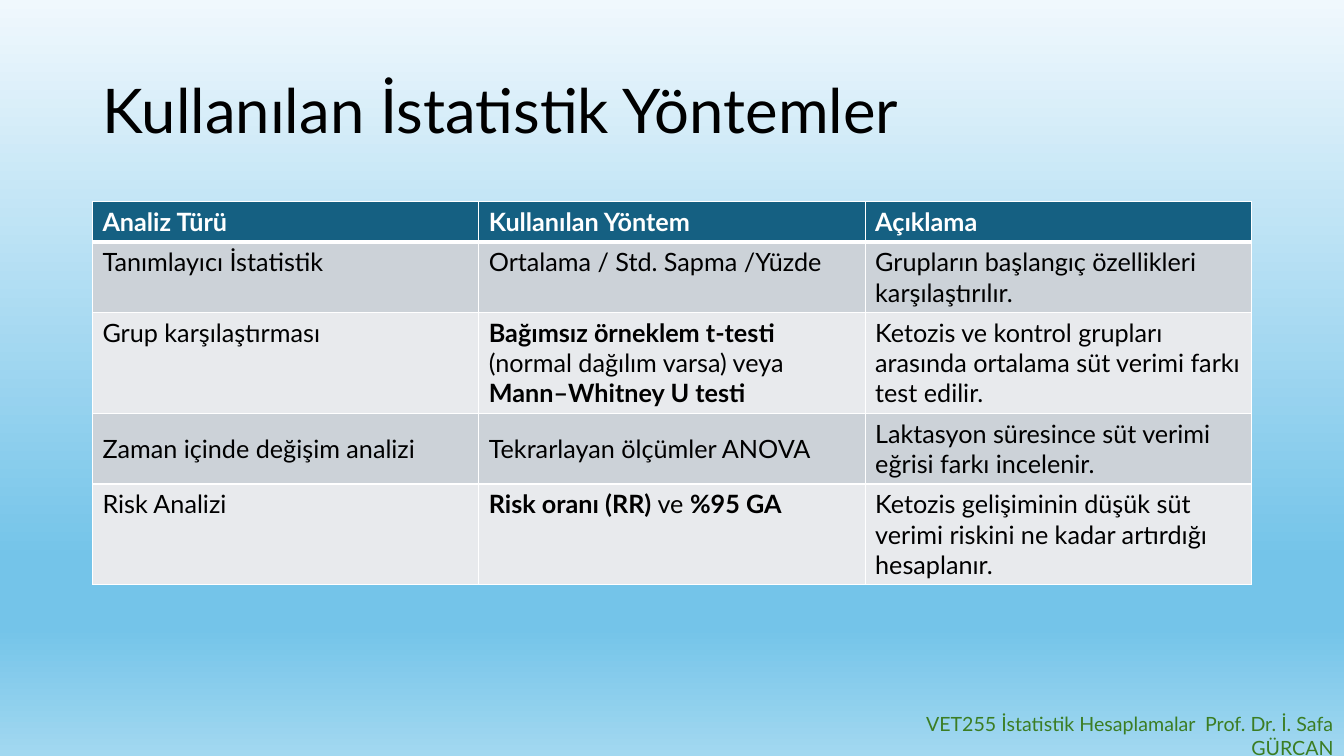
from dataclasses import dataclass

from lxml.etree import SubElement as Sub
from pptx import Presentation
from pptx.dml.color import RGBColor as Rgb
from pptx.enum.text import MSO_ANCHOR as Anchor, PP_ALIGN as Align
from pptx.oxml import parse_xml
from pptx.oxml.ns import nsdecls, qn
from pptx.util import Cm, Pt

TITLE = "Kullanılan İstatistik Yöntemler"
FOOTER = "VET255 İstatistik Hesaplamalar  Prof. Dr. İ. Safa GÜRCAN"
HEAD = ("Analiz Türü", "Kullanılan Yöntem", "Açıklama")
# A cell is plain text, or a list of (text, bold) runs.
BODY = [
    ("Tanımlayıcı İstatistik",
     "Ortalama / Std. Sapma /Yüzde",
     "Grupların başlangıç özellikleri karşılaştırılır."),
    ("Grup karşılaştırması",
     [("Bağımsız örneklem t-testi", True),
      (" (normal dağılım varsa) veya ", False),
      ("Mann–Whitney U testi", True)],
     "Ketozis ve kontrol grupları arasında ortalama süt verimi farkı test edilir."),
    ("Zaman içinde değişim analizi",
     "Tekrarlayan ölçümler ANOVA",
     "Laktasyon süresince süt verimi eğrisi farkı incelenir."),
    ("Risk Analizi",
     [("Risk oranı (RR) ", True), ("ve ", False), ("%95 GA", True)],
     "Ketozis gelişiminin düşük süt verimi riskini ne kadar artırdığı hesaplanır."),
]
LINES = (1, 2, 3, 2, 3)  # text lines in each table row
MIDDLE = 3  # the row whose text is centred vertically


@dataclass(frozen=True)
class Theme:
    face: str = "Lato"
    title: int = 44
    cell: int = 18
    foot: int = 14
    ink: str = "000000"
    white: str = "FFFFFF"
    green: str = "3B7D23"
    head: str = "156082"
    bands: tuple = ("E8EAED", "CCD2D8")
    sky: tuple = ((0, "F0F8FD"), (74, "74C4E9"), (83, "74C4E9"), (100, "A2D8F0"))


LOOK = Theme()
LEFT, WIDTH = Cm(2.33), Cm(29.21)


def style(para, size, color, bold=False):
    font = para.font
    font.name, font.size, font.bold = LOOK.face, Pt(size), bold
    font.color.rgb = Rgb.from_string(color)


def paint_sky(slide):
    fill = slide.background.fill
    fill.gradient()
    fill.gradient_angle = 270
    stops = slide.element.find(".//" + qn("a:gsLst"))
    for old in list(stops):
        stops.remove(old)
    for place, color in LOOK.sky:
        stop = Sub(stops, qn("a:gs"), pos=str(place * 1000))
        Sub(stop, qn("a:srgbClr"), val=color)


def edge(cell, top, low):
    """Give the cell white borders; top and low are widths in points."""
    props = cell._tc.get_or_add_tcPr()
    for i, (side, width) in enumerate(zip("LRTB", (1, 1, top, low))):
        props.insert(i, parse_xml(
            f'<a:ln{side} {nsdecls("a")} w="{Pt(width)}"><a:solidFill>'
            f'<a:srgbClr val="{LOOK.white}"/></a:solidFill></a:ln{side}>'))


def fill_cell(cell, text, row):
    top_row = row == 0
    para = cell.text_frame.paragraphs[0]
    style(para, LOOK.cell, LOOK.white if top_row else LOOK.ink, top_row)
    if isinstance(text, str):
        para.add_run().text = text
    else:
        for part, bold in text:
            run = para.add_run()
            run.text, run.font.bold = part, bold
    cell.vertical_anchor = Anchor.MIDDLE if row == MIDDLE else Anchor.TOP
    cell.fill.solid()
    cell.fill.fore_color.rgb = Rgb.from_string(
        LOOK.head if top_row else LOOK.bands[row % 2])
    edge(cell, 3 if row == 1 else 1, 3 if top_row else 1)


def add_title(slide):
    title = slide.shapes.title
    title.left, title.top, title.width, title.height = LEFT, Cm(1.01), WIDTH, Cm(3.68)
    title.text_frame.text = TITLE
    title.text_frame.vertical_anchor = Anchor.MIDDLE
    para = title.text_frame.paragraphs[0]
    para.alignment, para.line_spacing = Align.LEFT, 0.9
    style(para, LOOK.title, LOOK.ink)


def add_methods(slide):
    rows = [HEAD, *BODY]
    tall = [Cm(0.25 + 0.76 * n) for n in LINES]
    table = slide.shapes.add_table(
        len(rows), len(HEAD), LEFT, Cm(5.08), WIDTH, sum(tall)).table
    for r, texts in enumerate(rows):
        table.rows[r].height = tall[r]
        for c, text in enumerate(texts):
            fill_cell(table.cell(r, c), text, r)


def add_footer(slide):
    frame = slide.shapes.add_textbox(
        Cm(21.06), Cm(18.03), Cm(12.8), Cm(1.02)).text_frame
    frame.word_wrap = True
    frame.vertical_anchor = Anchor.MIDDLE
    frame.text = FOOTER
    para = frame.paragraphs[0]
    para.alignment = Align.RIGHT
    style(para, LOOK.foot, LOOK.green)


def main():
    deck = Presentation()
    deck.slide_width, deck.slide_height = Cm(33.87), Cm(19.05)
    slide = deck.slides.add_slide(deck.slide_layouts[5])
    paint_sky(slide)
    add_title(slide)
    add_methods(slide)
    add_footer(slide)
    deck.save("out.pptx")


if __name__ == "__main__":
    main()
